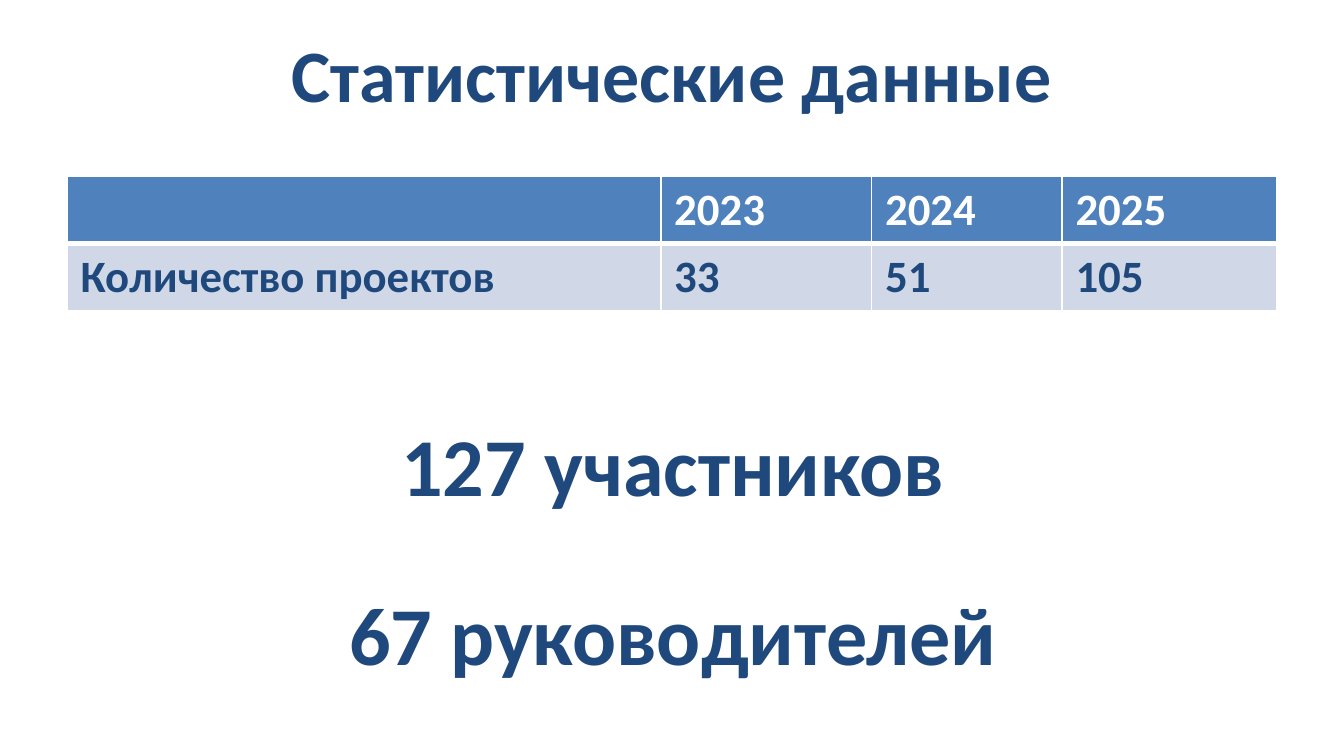
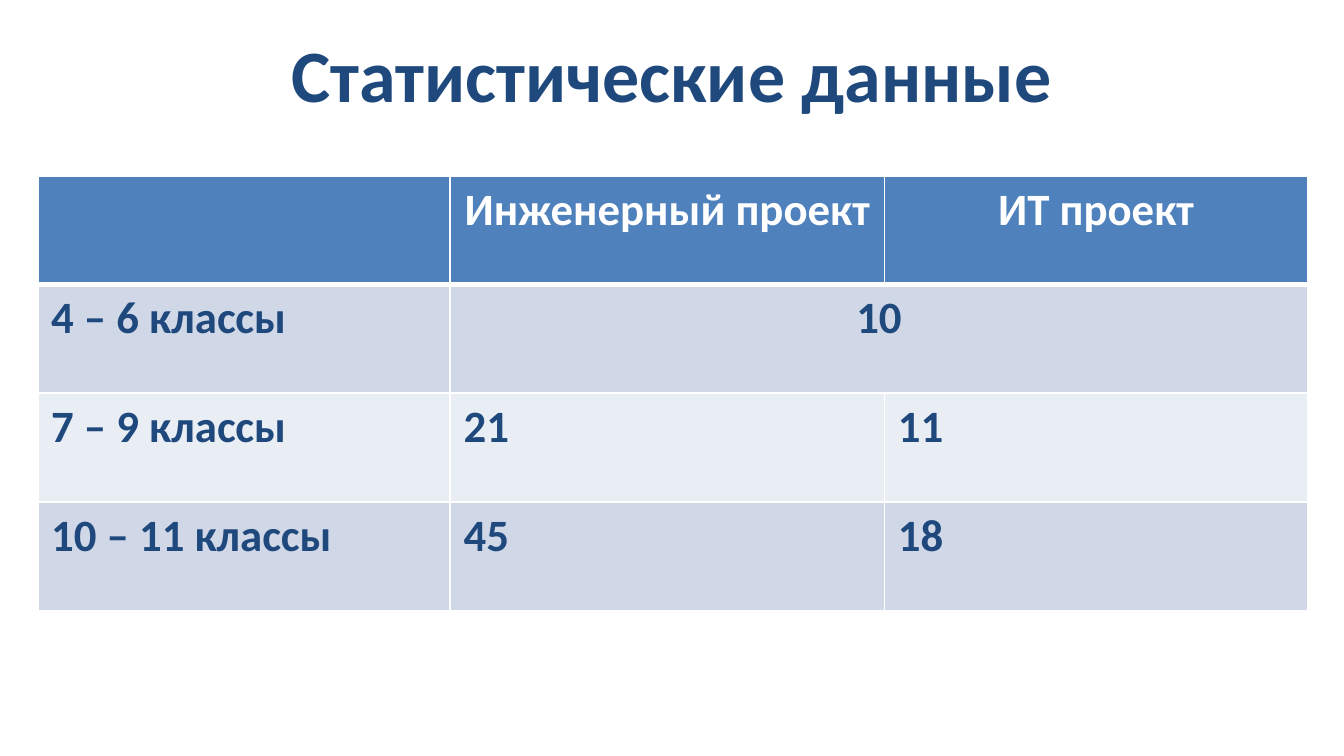
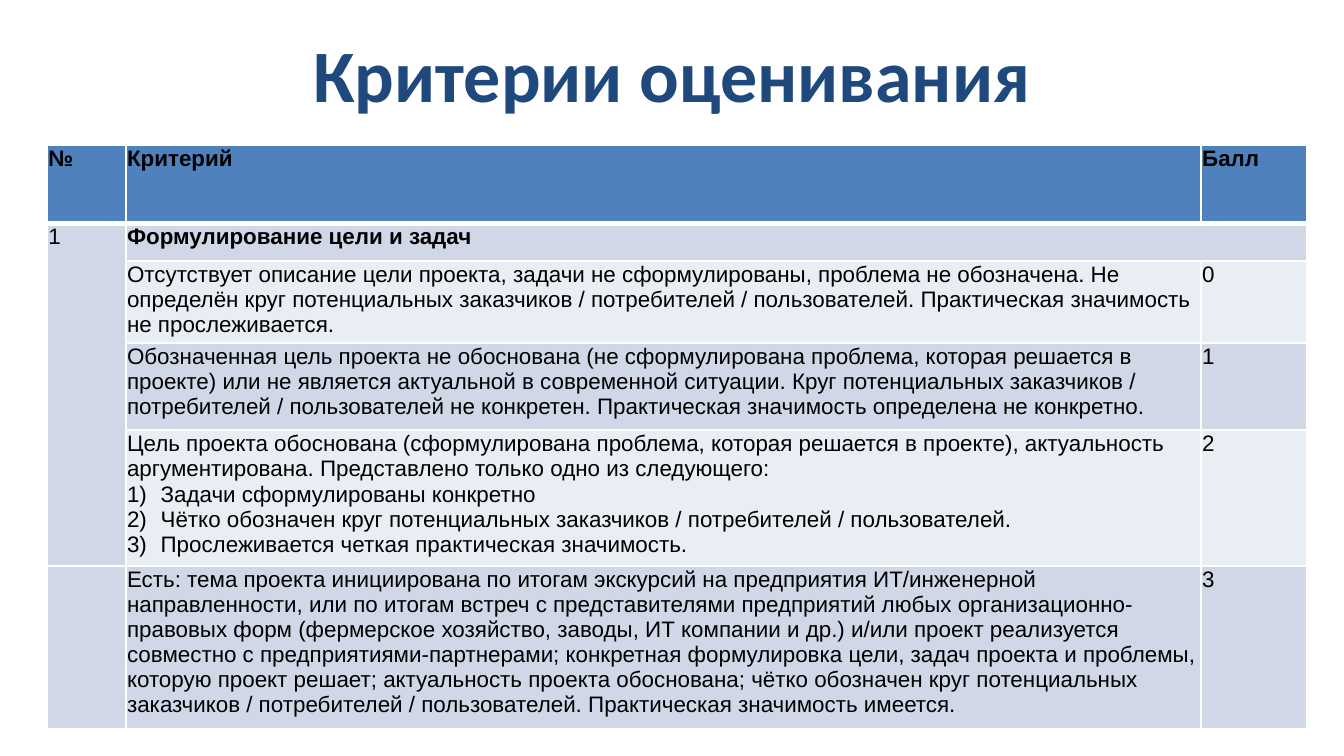
from dataclasses import dataclass

import pptx
import pptx.dml.color
import pptx.enum.text
import pptx.util
from lxml import etree
from pptx.oxml.ns import qn

Pt = pptx.util.Pt
PP_ALIGN = pptx.enum.text.PP_ALIGN

COLORS = {
    "navy": "1F497D",
    "header": "4F81BD",
    "band": "D0D8E8",
    "light": "E9EDF4",
    "white": "FFFFFF",
    "black": "000000",
}
RULE, HEADER_RULE = 1, 3


@dataclass(frozen=True)
class TextStyle:
    font: str
    size: float
    color: str
    bold: bool = True


@dataclass(frozen=True)
class Cell:
    text: str = ""
    center: bool = False
    bold: bool = False
    rows: int = 1
    cols: int = 1
    items: tuple[str, ...] = ()


@dataclass(frozen=True)
class Grid:
    left: float
    top: float
    widths: tuple[float, ...]
    heights: tuple[float, ...]
    cells: tuple[tuple[Cell | None, ...], ...]
    head: TextStyle
    body: TextStyle
    tight: bool = False


TITLE = TextStyle("Calibri", 39.6, "navy")
FIGURE = TextStyle("Calibri", 44, "navy")
STAT_HEAD = TextStyle("Calibri", 24, "white")
STAT_BODY = TextStyle("Calibri", 24, "navy")
CRITERIA_HEAD = TextStyle("Arial", 12, "black")
CRITERIA_BODY = TextStyle("Arial", 12, "black", False)

PROJECTS = Grid(
    36, 94.3, (318, 113, 102, 115), (36, 36),
    (
        (Cell(), Cell("2023"), Cell("2024"), Cell("2025")),
        (Cell("Количество проектов"), Cell("33"), Cell("51"), Cell("105")),
    ),
    STAT_HEAD, STAT_BODY,
)

CLASSES = Grid(
    20.2, 94.3, (221, 232.6, 226.8), (58.2,) * 4,
    (
        (Cell(), Cell("Инженерный проект", center=True), Cell("ИТ проект", center=True)),
        (Cell("4 – 6 классы"), Cell("10", center=True, cols=2), None),
        (Cell("7 – 9 классы"), Cell("21"), Cell("11")),
        (Cell("10 – 11 классы"), Cell("45"), Cell("18")),
    ),
    STAT_HEAD, STAT_BODY,
)

CRITERIA = Grid(
    25.2, 77.8, (42.2, 576, 56.6), (41.8, 20.2, 41.8, 46.8, 67.5, 81),
    (
        (Cell("№"), Cell("Критерий"), Cell("Балл")),
        (Cell("1", rows=4), Cell("Формулирование цели и задач", bold=True, cols=2), None),
        (
            None,
            Cell(
                "Отсутствует описание цели проекта, задачи не сформулированы, "
                "проблема не обозначена. Не определён круг потенциальных заказчиков / "
                "потребителей / пользователей. Практическая значимость не прослеживается."
            ),
            Cell("0"),
        ),
        (
            None,
            Cell(
                "Обозначенная цель проекта не обоснована (не сформулирована проблема, "
                "которая решается в проекте) или не является актуальной в современной "
                "ситуации. Круг потенциальных заказчиков / потребителей / пользователей "
                "не конкретен. Практическая значимость определена не конкретно."
            ),
            Cell("1"),
        ),
        (
            None,
            Cell(
                "Цель проекта обоснована (сформулирована проблема, которая решается в "
                "проекте), актуальность аргументирована. Представлено только одно из "
                "следующего:",
                items=(
                    "Задачи сформулированы конкретно",
                    "Чётко обозначен круг потенциальных заказчиков / потребителей / пользователей.",
                    "Прослеживается четкая практическая значимость.",
                ),
            ),
            Cell("2"),
        ),
        (
            Cell(),
            Cell(
                "Есть: тема проекта инициирована по итогам экскурсий на предприятия "
                "ИТ/инженерной направленности, или по итогам встреч с представителями "
                "предприятий любых организационно-правовых форм (фермерское хозяйство, "
                "заводы, ИТ компании и др.) и/или проект реализуется совместно с "
                "предприятиями-партнерами; конкретная формулировка цели, задач проекта и "
                "проблемы, которую проект решает; актуальность проекта обоснована; чётко "
                "обозначен круг потенциальных заказчиков / потребителей / пользователей. "
                "Практическая значимость имеется."
            ),
            Cell("3"),
        ),
    ),
    CRITERIA_HEAD, CRITERIA_BODY, tight=True,
)


def rgb(name: str) -> pptx.dml.color.RGBColor:
    return pptx.dml.color.RGBColor.from_string(COLORS[name])


def add_run(p, text: str, style: TextStyle, bold: bool = False) -> None:
    r = p.add_run()
    r.text = text
    r.font.name = style.font
    r.font.size = Pt(style.size)
    r.font.bold = style.bold or bold
    r.font.color.rgb = rgb(style.color)


def add_line(s, text: str, style: TextStyle, left: float, top: float, height: float) -> None:
    sp = s.shapes.add_textbox(Pt(left), Pt(top), Pt(648), Pt(height))
    tf = sp.text_frame
    tf.word_wrap = True
    tf.vertical_anchor = pptx.enum.text.MSO_ANCHOR.MIDDLE
    p = tf.paragraphs[0]
    p.alignment = PP_ALIGN.CENTER
    add_run(p, text, style)


def number_paragraph(p) -> None:
    pPr = p._p.get_or_add_pPr()
    pPr.set("marL", str(Pt(18)))
    pPr.set("indent", str(-Pt(18)))
    etree.SubElement(pPr, qn("a:buFont"), typeface="+mj-lt")
    etree.SubElement(pPr, qn("a:buAutoNum"), type="arabicParenR")


def set_borders(tc, bottom: float) -> None:
    tcPr = tc._tc.get_or_add_tcPr()
    sides = (("L", RULE), ("R", RULE), ("T", RULE), ("B", bottom))
    for i, (side, width) in enumerate(sides):
        ln = etree.Element(qn(f"a:ln{side}"), w=str(Pt(width)))
        fill = etree.SubElement(ln, qn("a:solidFill"))
        etree.SubElement(fill, qn("a:srgbClr"), val=COLORS["white"])
        tcPr.insert(i, ln)


def fill_text(tc, cell: Cell, style: TextStyle) -> None:
    tf = tc.text_frame
    p = tf.paragraphs[0]
    if cell.center:
        p.alignment = PP_ALIGN.CENTER
    if cell.text:
        add_run(p, cell.text, style, cell.bold)
    for item in cell.items:
        p = tf.add_paragraph()
        number_paragraph(p)
        add_run(p, item, style)


def add_grid(s, grid: Grid) -> None:
    table = s.shapes.add_table(
        len(grid.heights), len(grid.widths), Pt(grid.left), Pt(grid.top),
        Pt(sum(grid.widths)), Pt(sum(grid.heights)),
    ).table
    for column, width in zip(table.columns, grid.widths):
        column.width = Pt(width)
    for row, height in zip(table.rows, grid.heights):
        row.height = Pt(height)
    for i, row in enumerate(grid.cells):
        color = "header" if i == 0 else "band" if i % 2 else "light"
        for j, cell in enumerate(row):
            tc = table.cell(i, j)
            tc.fill.solid()
            tc.fill.fore_color.rgb = rgb(color)
            set_borders(tc, RULE if i else HEADER_RULE)
            if grid.tight:
                tc.margin_left = tc.margin_right = tc.margin_top = Pt(0.7)
                tc.margin_bottom = Pt(0)
            if cell is None:
                continue
            if cell.rows > 1 or cell.cols > 1:
                tc.merge(table.cell(i + cell.rows - 1, j + cell.cols - 1))
            fill_text(tc, cell, grid.body if i else grid.head)


def add_slide(prs, title: str, grid: Grid):
    s = prs.slides.add_slide(prs.slide_layouts[6])
    add_line(s, title, TITLE, 36, 16.6, 44.6)
    add_grid(s, grid)
    return s


def main() -> None:
    prs = pptx.Presentation()
    prs.slide_width, prs.slide_height = Pt(720), Pt(405)
    s = add_slide(prs, "Статистические данные", PROJECTS)
    for i, text in enumerate(("127 участников", "67 руководителей")):
        add_line(s, text, FIGURE, 36.7, 214.6 + 90.7 * i, 67.7)
    add_slide(prs, "Статистические данные", CLASSES)
    add_slide(prs, "Критерии оценивания", CRITERIA)
    prs.save("out.pptx")


if __name__ == "__main__":
    main()
